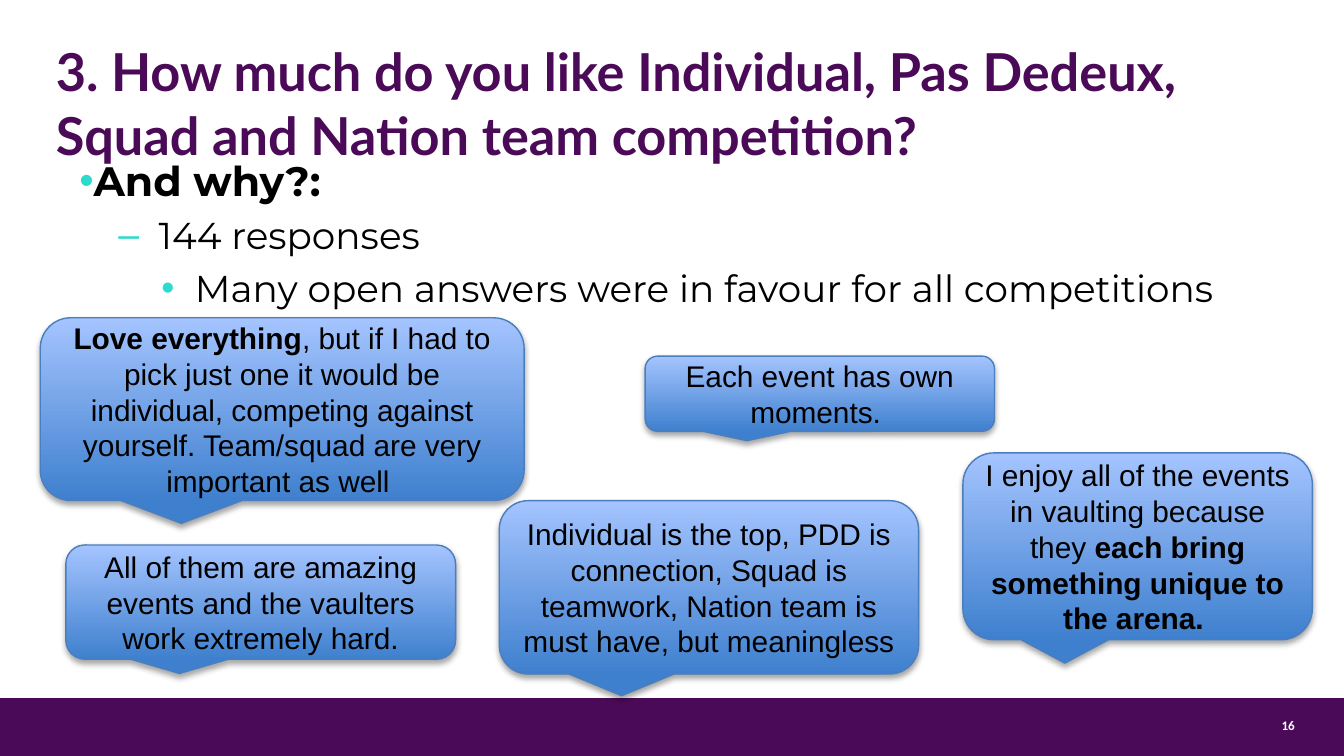
import pptx
import pptx.util
import pptx.dml.color
import pptx.enum.shapes
import pptx.enum.text
import pptx.oxml
import pptx.oxml.ns
from lxml import etree

COLUMNS, ROWS = 100, 56.25
CELL = pptx.util.Inches(0.1)

THEME = {
    "purple": "4B0A57", "accent": "2CDACE", "text": "000000", "white": "FFFFFF",
    "bubble_low": "3F80CE", "bubble_high": "A4C4FF", "bubble_edge": "4B7EBC",
    "title": {"name": "Lato", "size": 28, "bold": True, "color": "purple"},
    "body": {"name": "Montserrat", "size": 20, "bold": False, "color": "text"},
    "lead": {"name": "Montserrat", "size": 22, "bold": True, "color": "text"},
    "quote": {"name": "Arial", "size": 16, "bold": False, "color": "text"},
    "strong": {"name": "Arial", "size": 16, "bold": True, "color": "text"},
    "number": {"name": "Calibri", "size": 7, "bold": True, "color": "white"},
}

QUESTION = "3. How much do you like Individual, Pas Dedeux, Squad and Nation team competition?"
PAGE = "16"
POINTS = [
    ("And why?:", "lead", "•", 0, -0.2),
    ("144 responses", "body", "–", 0.59, -0.3),
    ("Many open answers were in favour for all competitions", "body", "•", 0.86, -0.25),
]
QUOTES = [
    ((3, 23.65, 36, 13.6), [
        ("Love everything", "strong"),
        (", but if I had to pick just one it would be individual, competing against "
         "yourself. Team/squad are very important as well ", "quote")]),
    ((48, 26.5, 26, 5.6), [("Each event has own moments. ", "quote")]),
    ((71.65, 33.7, 26, 13.9), [
        ("I enjoy all of the events in vaulting because they ", "quote"),
        ("each bring something unique to the arena. ", "strong")]),
    ((37.15, 37.25, 31.2, 12.9), [
        ("Individual is the top, PDD is connection, Squad is teamwork, "
         "Nation team is must have, but meaningless", "quote")]),
    ((4.9, 40.55, 29, 8.5), [
        ("All of them are amazing events and the vaulters work extremely hard.", "quote")]),
]
TITLE_AREA = (4.15, 2.4, 91.7, 5.4)
BODY_AREA = (4.9, 11.1, 91.7, 37.9)
FOOTER_AREA = (0, 51.95, COLUMNS, ROWS - 51.95)
PAGE_AREA = (94.95, 52.9, 1.8, 2.3)

ALIGN = pptx.enum.text.PP_ALIGN
ANCHOR = pptx.enum.text.MSO_ANCHOR
SHAPE = pptx.enum.shapes.MSO_SHAPE


def rgb(name):
    return pptx.dml.color.RGBColor.from_string(THEME[name])


def span(area):
    return [round(value * CELL) for value in area]


def place(shape, area):
    for side, value in zip(("left", "top", "width", "height"), span(area)):
        setattr(shape, side, value)


def frame_text(shape, **settings):
    frame = shape.text_frame
    defaults = {"word_wrap": True, "auto_size": pptx.enum.text.MSO_AUTO_SIZE.NONE}
    for key, value in {**defaults, **settings}.items():
        setattr(frame, key, value)
    return frame


def write(paragraph, words, style):
    run = paragraph.add_run()
    run.text = words
    look = THEME[style]
    formats = {"name": look["name"], "size": pptx.util.Pt(look["size"]), "bold": look["bold"]}
    for key, value in formats.items():
        setattr(run.font, key, value)
    run.font.color.rgb = rgb(look["color"])


def add_bullet(paragraph, mark, margin, indent):
    props = paragraph._p.get_or_add_pPr()
    props.set("marL", str(pptx.util.Inches(margin)))
    props.set("indent", str(pptx.util.Inches(indent)))
    tag = pptx.oxml.ns.qn
    colour = etree.SubElement(props, tag("a:buClr"))
    etree.SubElement(colour, tag("a:srgbClr"), val=THEME["accent"])
    etree.SubElement(props, tag("a:buFont"), typeface="Arial")
    etree.SubElement(props, tag("a:buChar"), char=mark)


def add_shadow(shape):
    shape.shadow.inherit = False
    effects = shape._element.spPr.find(pptx.oxml.ns.qn("a:effectLst"))
    effects.append(pptx.oxml.parse_xml(
        f'<a:outerShdw {pptx.oxml.ns.nsdecls("a")} blurRad="{pptx.util.Pt(3.1)}" '
        f'dist="{pptx.util.Pt(1.8)}" dir="5400000" rotWithShape="0">'
        f'<a:srgbClr val="{THEME["text"]}"><a:alpha val="35000"/></a:srgbClr></a:outerShdw>'))


def add_quote(slide, area, parts):
    bubble = slide.shapes.add_shape(SHAPE.ROUNDED_RECTANGULAR_CALLOUT, *span(area))
    bubble.fill.gradient()
    bubble.fill.gradient_angle = 90
    for stop, shade in zip(bubble.fill.gradient_stops, ("bubble_low", "bubble_high")):
        stop.color.rgb = rgb(shade)
    bubble.line.color.rgb = rgb("bubble_edge")
    bubble.line.width = pptx.util.Pt(0.75)
    add_shadow(bubble)
    paragraph = frame_text(bubble, vertical_anchor=ANCHOR.MIDDLE).paragraphs[0]
    paragraph.alignment = ALIGN.CENTER
    for words, style in parts:
        write(paragraph, words, style)


def main():
    deck = pptx.Presentation()
    deck.slide_width, deck.slide_height = span((COLUMNS, ROWS))
    slide = deck.slides.add_slide(deck.slide_layouts[1])

    title, body = slide.placeholders
    place(title, TITLE_AREA)
    heading = frame_text(title, vertical_anchor=ANCHOR.TOP, margin_left=0,
                         margin_right=0).paragraphs[0]
    heading.alignment = ALIGN.LEFT
    heading.line_spacing = pptx.util.Pt(34)
    write(heading, QUESTION, "title")

    place(body, BODY_AREA)
    answers = frame_text(body, vertical_anchor=ANCHOR.TOP)
    for level, (words, style, mark, margin, indent) in enumerate(POINTS):
        point = answers.add_paragraph() if level else answers.paragraphs[0]
        point.level = level
        add_bullet(point, mark, margin, indent)
        point.space_before = pptx.util.Pt(4 if level else 0)
        write(point, words, style)

    footer = slide.shapes.add_shape(SHAPE.RECTANGLE, *span(FOOTER_AREA))
    footer.shadow.inherit = False
    footer.fill.solid()
    footer.fill.fore_color.rgb = rgb("purple")
    footer.line.fill.background()

    page = slide.shapes.add_textbox(*span(PAGE_AREA))
    number = frame_text(page, margin_left=0, margin_right=0).paragraphs[0]
    number.alignment = ALIGN.CENTER
    write(number, PAGE, "number")

    for area, parts in QUOTES:
        add_quote(slide, area, parts)
    deck.save("out.pptx")


if __name__ == "__main__":
    main()
